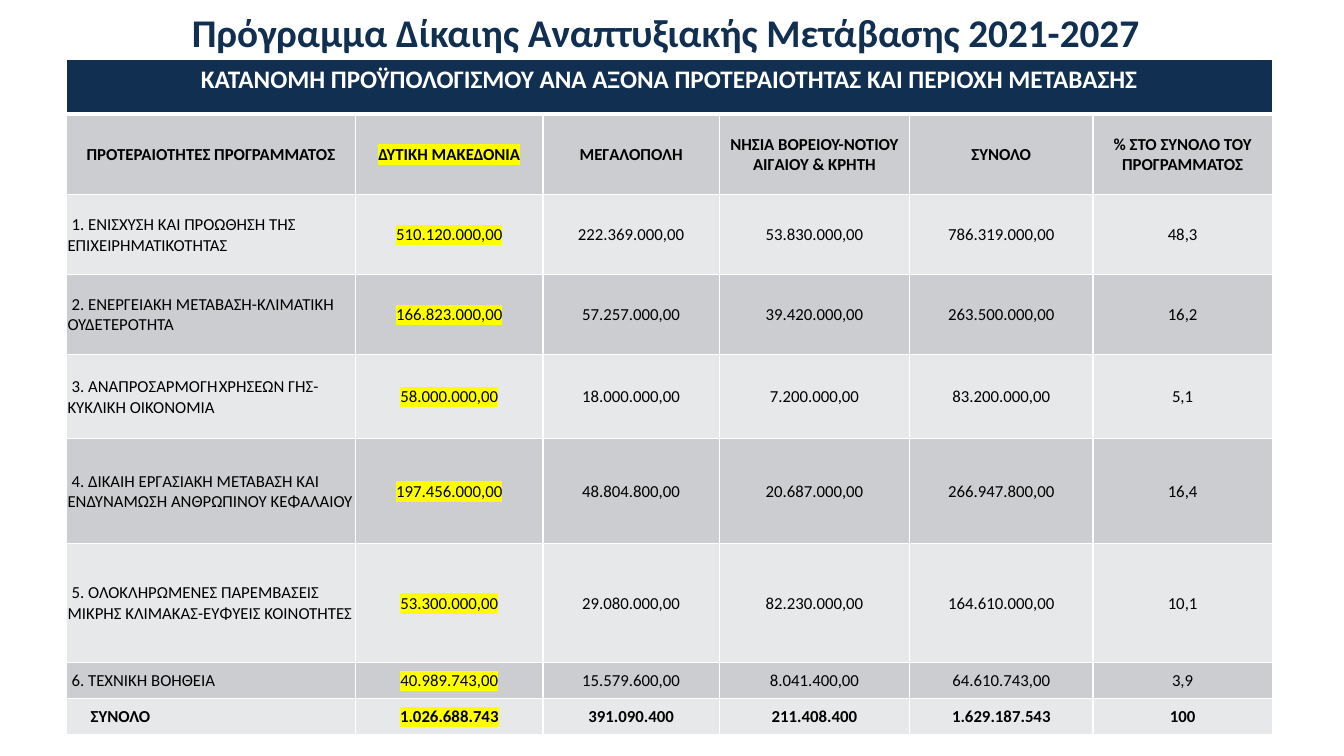
from lxml import etree
from pptx import Presentation
from pptx.dml.color import RGBColor
from pptx.enum.text import MSO_ANCHOR, PP_ALIGN
from pptx.oxml.ns import qn
from pptx.util import Inches, Pt

LEFT, CENTER = PP_ALIGN.LEFT, PP_ALIGN.CENTER
TOP, MIDDLE = MSO_ANCHOR.TOP, MSO_ANCHOR.MIDDLE

COLORS = {"navy": "112F51", "white": "FFFFFF", "black": "000000",
          "dark_band": "CCCDD0", "light_band": "E7E8E9", "marker": "FFFF00"}
FONT = "Calibri"

TITLE_BOX = (1.12, 0, 10.96, 0.7)
TABLE_BOX = (0.66, 0.59, 11.96, 6.7)
COLUMNS = [2.87, 1.86, 1.75, 1.89, 1.82, 1.78]
ROWS = [0.54, 0.8, 0.8, 0.79, 0.84, 1.04, 1.18, 0.36, 0.36]
MARKED_COLUMN = 1
ITEM_INDENT, TOTAL_INDENT = 0.04, 0.23
GAP_TAB = 1.59
BANNER_MARGINS = {"margin_left": 0.07, "margin_top": 0.05,
                  "margin_right": 0.07, "margin_bottom": 0.05}
BODY_MARGINS = {"margin_left": 0.01, "margin_top": 0.01,
                "margin_right": 0.01, "margin_bottom": 0}

TITLE = "Πρόγραμμα Δίκαιης Αναπτυξιακής Μετάβασης 2021-2027"
BANNER = "ΚΑΤΑΝΟΜΗ ΠΡΟΫΠΟΛΟΓΙΣΜΟΥ ΑΝΑ ΑΞΟΝΑ ΠΡΟΤΕΡΑΙΟΤΗΤΑΣ ΚΑΙ ΠΕΡΙΟΧΗ ΜΕΤΑΒΑΣΗΣ"
BUDGET = [
    ["ΠΡΟΤΕΡΑΙΟΤΗΤΕΣ ΠΡΟΓΡΑΜΜΑΤΟΣ", "ΔΥΤΙΚΗ ΜΑΚΕΔΟΝΙΑ", "ΜΕΓΑΛΟΠΟΛΗ",
     "ΝΗΣΙΑ ΒΟΡΕΙΟΥ-ΝΟΤΙΟΥ ΑΙΓΑΙΟΥ & ΚΡΗΤΗ", "ΣΥΝΟΛΟ",
     "% ΣΤΟ ΣΥΝΟΛΟ ΤΟΥ ΠΡΟΓΡΑΜΜΑΤΟΣ"],
    ["1. ΕΝΙΣΧΥΣΗ ΚΑΙ ΠΡΟΩΘΗΣΗ ΤΗΣ ΕΠΙΧΕΙΡΗΜΑΤΙΚΟΤΗΤΑΣ",
     "510.120.000,00", "222.369.000,00", "53.830.000,00", "786.319.000,00", "48,3"],
    ["2. ΕΝΕΡΓΕΙΑΚΗ ΜΕΤΑΒΑΣΗ-ΚΛΙΜΑΤΙΚΗ ΟΥΔΕΤΕΡΟΤΗΤΑ",
     "166.823.000,00", "57.257.000,00", "39.420.000,00", "263.500.000,00", "16,2"],
    ["3. ΑΝΑΠΡΟΣΑΡΜΟΓΗ\tΧΡΗΣΕΩΝ ΓΗΣ-ΚΥΚΛΙΚΗ ΟΙΚΟΝΟΜΙΑ",
     "58.000.000,00", "18.000.000,00", "7.200.000,00", "83.200.000,00", "5,1"],
    ["4. ΔΙΚΑΙΗ ΕΡΓΑΣΙΑΚΗ ΜΕΤΑΒΑΣΗ ΚΑΙ ΕΝΔΥΝΑΜΩΣΗ ΑΝΘΡΩΠΙΝΟΥ ΚΕΦΑΛΑΙΟΥ",
     "197.456.000,00", "48.804.800,00", "20.687.000,00", "266.947.800,00", "16,4"],
    ["5. ΟΛΟΚΛΗΡΩΜΕΝΕΣ ΠΑΡΕΜΒΑΣΕΙΣ ΜΙΚΡΗΣ ΚΛΙΜΑΚΑΣ-ΕΥΦΥΕΙΣ ΚΟΙΝΟΤΗΤΕΣ",
     "53.300.000,00", "29.080.000,00", "82.230.000,00", "164.610.000,00", "10,1"],
    ["6. ΤΕΧΝΙΚΗ ΒΟΗΘΕΙΑ",
     "40.989.743,00", "15.579.600,00", "8.041.400,00", "64.610.743,00", "3,9"],
    ["ΣΥΝΟΛΟ", "1.026.688.743", "391.090.400", "211.408.400", "1.629.187.543", "100"],
]


def add_color(parent, color):
    etree.SubElement(parent, qn("a:srgbClr"), val=COLORS[color])


def write(paragraph, text, size, color, bold, align=CENTER, marked=False):
    paragraph.alignment = align
    run = paragraph.add_run()
    run.text = text
    formats = {"size": Pt(size), "bold": bold}
    for name, value in formats.items():
        setattr(run.font, name, value)
    run.font.color.rgb = RGBColor.from_string(COLORS[color])
    if marked:
        add_color(etree.SubElement(run.font._element, qn("a:highlight")), "marker")
    run.font.name = FONT


def indent_first_line(paragraph, indent):
    properties = paragraph._p.get_or_add_pPr()
    properties.set("marL", "0")
    properties.set("indent", str(Inches(indent)))


def add_gap_tab(paragraph):
    tabs = etree.SubElement(paragraph._p.get_or_add_pPr(), qn("a:tabLst"))
    etree.SubElement(tabs, qn("a:tab"), pos=str(Inches(GAP_TAB)), algn="l")


def style_cell(cell, fill, margins, anchor, top=1, bottom=1):
    """Set borders (widths in points), fill, margins and anchor."""
    widths = {"a:lnL": 1, "a:lnR": 1, "a:lnT": top, "a:lnB": bottom}
    for side, width in widths.items():
        border = etree.SubElement(cell._tc.get_or_add_tcPr(), qn(side), w=str(Pt(width)))
        add_color(etree.SubElement(border, qn("a:solidFill")), "white")
    cell.fill.solid()
    cell.fill.fore_color.rgb = RGBColor.from_string(COLORS[fill])
    for name, value in margins.items():
        setattr(cell, name, Inches(value))
    cell.vertical_anchor = anchor


def add_title(slide, box):
    frame = slide.shapes.add_textbox(*map(Inches, box)).text_frame
    frame.word_wrap = True
    frame.vertical_anchor = MIDDLE
    frame.paragraphs[0].line_spacing = 0.9
    write(frame.paragraphs[0], TITLE, 28, "navy", True)


def add_banner_row(table):
    for cell in table.rows[0].cells:
        style_cell(cell, "navy", BANNER_MARGINS, TOP, bottom=3)
    table.cell(0, 0).merge(table.cell(0, len(COLUMNS) - 1))
    write(table.cell(0, 0).text_frame.paragraphs[0], BANNER, 18, "white", True)


def add_budget_rows(table):
    total_row = len(BUDGET)
    for row, texts in enumerate(BUDGET, 1):
        fill = "dark_band" if row % 2 else "light_band"
        for column, text in enumerate(texts):
            cell = table.cell(row, column)
            style_cell(cell, fill, BODY_MARGINS, MIDDLE, top=3 if row == 1 else 1)
            paragraph = cell.text_frame.paragraphs[0]
            is_priority = column == 0 and row > 1
            if is_priority:
                indent_first_line(paragraph, TOTAL_INDENT if row == total_row else ITEM_INDENT)
            if "\t" in text:
                add_gap_tab(paragraph)
            write(paragraph, text, 12, "black", row in (1, total_row),
                  LEFT if is_priority else CENTER, column == MARKED_COLUMN)


def add_budget_table(slide, box):
    _, _, width, height = box
    table = slide.shapes.add_table(len(ROWS), len(COLUMNS), *map(Inches, box)).table
    table.first_row = table.horz_banding = False
    for column, share in zip(table.columns, COLUMNS):
        column.width = Inches(width * share / sum(COLUMNS))
    for row, share in zip(table.rows, ROWS):
        row.height = Inches(height * share / sum(ROWS))
    add_banner_row(table)
    add_budget_rows(table)


def main():
    deck = Presentation()
    deck.slide_width, deck.slide_height = Inches(13.33), Inches(7.5)
    slide = deck.slides.add_slide(deck.slide_layouts[6])
    add_title(slide, TITLE_BOX)
    add_budget_table(slide, TABLE_BOX)
    deck.save("out.pptx")


if __name__ == "__main__":
    main()
